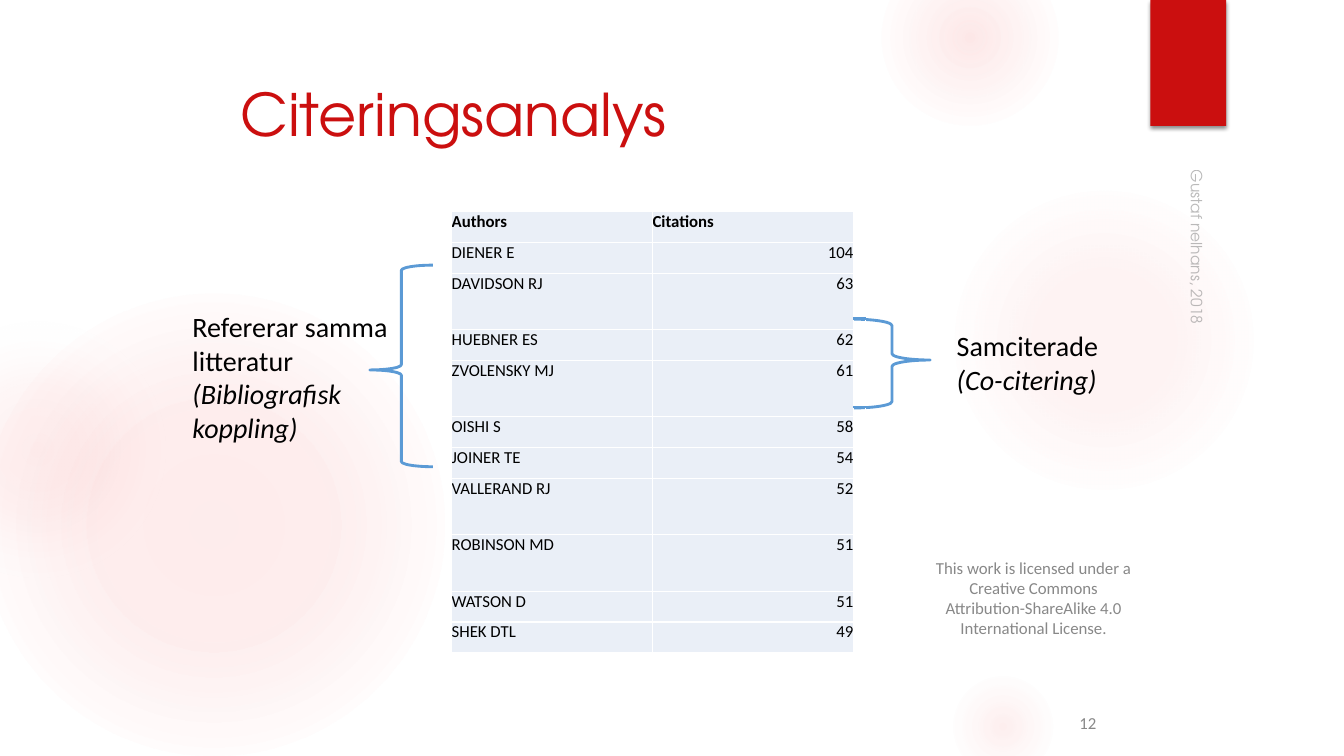
from dataclasses import dataclass

from lxml.etree import SubElement
from pptx import Presentation
from pptx.dml.color import RGBColor
from pptx.enum.shapes import MSO_SHAPE
from pptx.enum.text import MSO_ANCHOR, PP_ALIGN
from pptx.oxml import parse_xml
from pptx.oxml.ns import nsdecls, qn
from pptx.util import Pt


@dataclass(frozen=True)
class Theme:
    red: str = "CB0F0F"
    glow: str = "F35C5C"
    pale: str = "F3F3F3"
    blue: str = "5B9AD5"
    cell: str = "EAEFF7"
    white: str = "FFFFFF"
    black: str = "000000"
    gray: str = "888888"
    footer_gray: str = "8C8C8C"
    heading_font: str = "TeX Gyre Adventor"
    body_font: str = "Calibri"
    title: float = 42
    label: float = 20
    small: float = 12
    footer: float = 11
    empty: float = 1


T = Theme()

# left, top, diameter, (position %, opacity %) of each gradient stop, outer colour
GLOWS = [
    (-12.2, 210, 330, ((0, 11), (36, 10), (75, 0)), T.glow),
    (-66.2, 228, 186, ((0, 8), (36, 5), (71, 0)), T.pale),
    (677.5, 132, 222, ((0, 7), (36, 6), (69, 0)), T.glow),
    (630, -36, 126, ((0, 14), (36, 7), (73, 0)), T.glow),
    (677.5, 480, 78, ((0, 10), (31, 5), (66, 0)), T.glow),
]

COLUMNS = (143.5, 143.5, 8.6)
# author, citations, heights of the table rows that the entry covers
CITATIONS = [
    ("Authors", "Citations", (22,)),
    ("DIENER E", "104", (22,)),
    ("DAVIDSON RJ", "63", (32.4, 7.9)),
    ("HUEBNER ES", "62", (22,)),
    ("ZVOLENSKY MJ", "61", (33.1, 7.2)),
    ("OISHI S", "58", (22,)),
    ("JOINER TE", "54", (22,)),
    ("VALLERAND RJ", "52", (40.3,)),
    ("ROBINSON MD", "51", (40.3,)),
    ("WATSON D", "51", (22,)),
    ("SHEK DTL", "49", (22,)),
]
# first and last row of each merged cell beside the brace
BRACE_CELLS = ((0, 2), (3, 5), (6, 12))


def rgb(color):
    return RGBColor.from_string(color)


def style(r, size, color, font=T.body_font, bold=False, italic=False):
    r.font.name = font
    r.font.size = Pt(size)
    r.font.color.rgb = rgb(color)
    r.font.bold = bold
    r.font.italic = italic


def set_margins(target, left=0, right=0):
    target.margin_left, target.margin_right = Pt(left), Pt(right)
    target.margin_top = target.margin_bottom = Pt(0)


def add_plain_shape(s, kind, left, top, width, height):
    sp = s.shapes.add_shape(kind, Pt(left), Pt(top), Pt(width), Pt(height))
    sp.shadow.inherit = False
    sp.line.fill.background()
    return sp


def add_glow(s, left, top, diameter, stops, outer):
    """Add a circle that fades out from its centre."""
    sp = add_plain_shape(s, MSO_SHAPE.OVAL, left, top, diameter, diameter)
    sp.fill.solid()
    stop_xml = "".join(
        f'<a:gs pos="{pos * 1000}"><a:srgbClr val="{color}">'
        f'<a:alpha val="{alpha * 1000}"/></a:srgbClr></a:gs>'
        for (pos, alpha), color in zip(stops, (T.glow, T.glow, outer)))
    gradient = parse_xml(
        f'<a:gradFill {nsdecls("a")} rotWithShape="1"><a:gsLst>{stop_xml}</a:gsLst>'
        '<a:path path="circle"><a:fillToRect l="50000" t="50000" r="50000" b="50000"/>'
        '</a:path></a:gradFill>')
    sp_pr = sp.element.spPr
    sp_pr.replace(sp_pr.find(qn("a:solidFill")), gradient)


def add_ribbon(s):
    sp = add_plain_shape(s, MSO_SHAPE.RECTANGLE, 821.8, 0, 54, 90)
    sp.fill.solid()
    sp.fill.fore_color.rgb = rgb(T.red)
    effects = sp.element.spPr.find(qn("a:effectLst"))
    effects.append(parse_xml(
        f'<a:outerShdw {nsdecls("a")} blurRad="{Pt(3)}" dist="{Pt(2)}" dir="5400000" '
        f'rotWithShape="0"><a:srgbClr val="{T.black}"><a:alpha val="45000"/>'
        '</a:srgbClr></a:outerShdw>'))


def add_text(s, left, top, width, height, text, size, color,
             font=T.body_font, align=PP_ALIGN.LEFT):
    box = s.shapes.add_textbox(Pt(left), Pt(top), Pt(width), Pt(height))
    tf = box.text_frame
    tf.word_wrap = True
    set_margins(tf, left=0.5)
    p = tf.paragraphs[0]
    p.text = text
    p.alignment = align
    style(p.runs[0], size, color, font)
    return box


def add_italic(p, text):
    r = p.add_run()
    r.text = text
    style(r, T.label, T.black, italic=True)


def add_brace(s, kind, left, top, width, height, tip):
    sp = add_plain_shape(s, kind, left, top, width, height)
    sp.fill.background()
    sp.line.color.rgb = rgb(T.blue)
    sp.line.width = Pt(2.04)
    sp.adjustments[1] = tip


def add_border(cell, side, color, width):
    ln = SubElement(cell._tc.get_or_add_tcPr(), qn(f"a:{side}"), w=str(Pt(width)))
    SubElement(SubElement(ln, qn("a:solidFill")), qn("a:srgbClr"), val=color)


def fill_cell(cell, text, align, bold):
    cell.text = text
    p = cell.text_frame.paragraphs[0]
    p.alignment = align
    style(p.runs[0], T.small, T.black, bold=bold)


def add_citation_table(s):
    heights = [h for _, _, covered in CITATIONS for h in covered]
    table = s.shapes.add_table(len(heights), len(COLUMNS), Pt(322.6), Pt(151.2),
                               Pt(sum(COLUMNS)), Pt(sum(heights))).table
    table.first_row = table.horz_banding = False
    for column, width in zip(table.columns, COLUMNS):
        column.width = Pt(width)
    for row, height in zip(table.rows, heights):
        row.height = Pt(height)
        for j, cell in enumerate(row.cells):
            set_margins(cell)
            p = cell.text_frame.paragraphs[0]
            SubElement(p._p, qn("a:endParaRPr"), sz=str(int(T.empty * 100)))
            if j < 2:
                for side in ("lnL", "lnR", "lnT", "lnB"):
                    add_border(cell, side, T.white, 1)
                cell.fill.solid()
                cell.fill.fore_color.rgb = rgb(T.cell)

    i = 0
    for author, count, covered in CITATIONS:
        for j, value in enumerate((author, count)):
            cell = table.cell(i, j)
            if len(covered) > 1:
                cell.merge(table.cell(i + len(covered) - 1, j))
            align = PP_ALIGN.RIGHT if i and j else PP_ALIGN.LEFT
            fill_cell(cell, value, align, bold=i == 0)
        i += len(covered)

    for first, last in BRACE_CELLS:
        table.cell(first, 2).merge(table.cell(last, 2))
        for i in range(first, last + 1):
            cell = table.cell(i, 2)
            add_border(cell, "lnL", T.white, 1)
            if i == first and first > 0:
                add_border(cell, "lnT", T.blue, 2.04)
            if i == last and last < len(heights) - 1:
                add_border(cell, "lnB", T.blue, 2.04)
            cell.fill.background()


def add_footer(s):
    box = add_text(s, 704.9, 254.2, 303.8, 23.8, "Gustaf nelhans, 2018",
                   T.footer, T.footer_gray, T.heading_font)
    box.rotation = 90
    tf = box.text_frame
    set_margins(tf, 7.2, 7.2)
    tf.margin_bottom = Pt(3.6)
    tf.vertical_anchor = MSO_ANCHOR.BOTTOM
    for color in box.element.iter(qn("a:srgbClr")):
        SubElement(color, qn("a:alpha"), val="60000")


def main():
    prs = Presentation()
    prs.slide_width, prs.slide_height = Pt(960), Pt(540)
    s = prs.slides.add_slide(prs.slide_layouts[6])

    for glow in GLOWS:
        add_glow(s, *glow)
    add_ribbon(s)
    add_text(s, 171.2, 55.4, 640, 51, "Citeringsanalys", T.title, T.red, T.heading_font)
    add_text(s, 664.6, 398.2, 146.9, 58.3,
             "This work is licensed under a Creative Commons "
             "Attribution-ShareAlike 4.0 International License.",
             T.small, T.gray, align=PP_ALIGN.CENTER)
    add_text(s, 770.5, 509, 20, 14.4, "12", T.small, T.gray)
    add_brace(s, MSO_SHAPE.LEFT_BRACE, 264.2, 189.4, 45, 144, 0.52)
    add_brace(s, MSO_SHAPE.RIGHT_BRACE, 609.8, 228, 54.7, 63.4, 0.46)
    co_citing = add_text(s, 682.9, 234.7, 103, 48.2, "Samciterade", T.label, T.black)
    add_italic(co_citing.text_frame.add_paragraph(), "(Co-citering)")
    coupling = add_text(s, 137, 221, 141.1, 97.2, "Refererar samma litteratur ",
                        T.label, T.black)
    add_italic(coupling.text_frame.paragraphs[0], "(Bibliografisk koppling)")
    add_citation_table(s)
    add_footer(s)
    prs.save("out.pptx")


if __name__ == "__main__":
    main()
